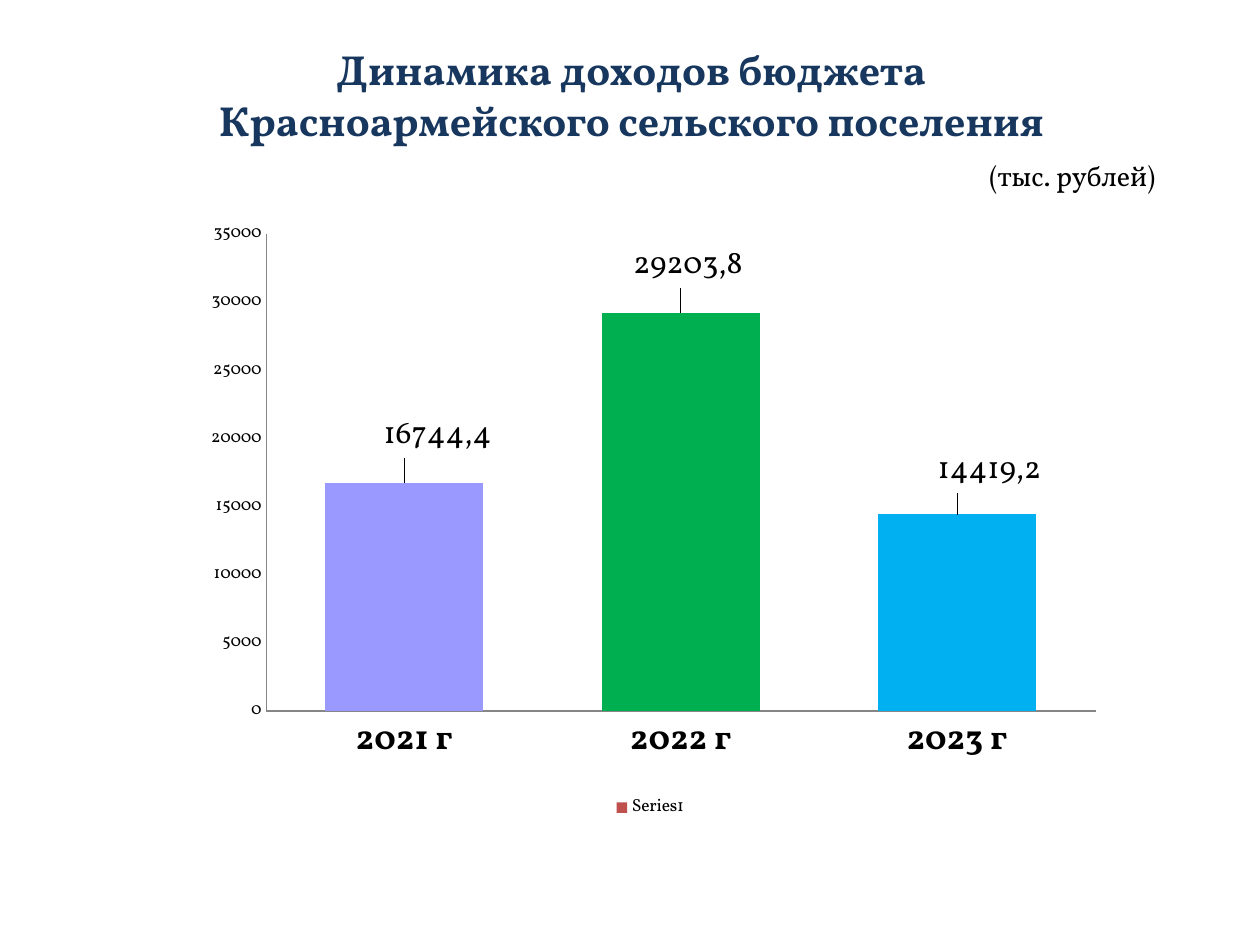
from dataclasses import dataclass

from pptx import Presentation
from pptx.chart.data import CategoryChartData
from pptx.dml.color import RGBColor
from pptx.enum.chart import (XL_CHART_TYPE, XL_LABEL_POSITION,
                             XL_LEGEND_POSITION, XL_TICK_MARK)
from pptx.enum.text import MSO_ANCHOR, MSO_AUTO_SIZE, PP_ALIGN
from pptx.oxml import parse_xml
from pptx.oxml.ns import nsdecls, qn
from pptx.util import Inches, Pt

COLUMN = XL_CHART_TYPE.COLUMN_CLUSTERED
OUTSIDE = XL_LABEL_POSITION.OUTSIDE_END
BOTTOM = XL_LEGEND_POSITION.BOTTOM
NO_TICK = XL_TICK_MARK.NONE
MIDDLE = MSO_ANCHOR.MIDDLE
NO_FIT = MSO_AUTO_SIZE.NONE
CENTER, RIGHT = PP_ALIGN.CENTER, PP_ALIGN.RIGHT

# Turns off the lines from moved labels to their columns
NO_LEADER = (f'<c:extLst {nsdecls("c")}>'
             '<c:ext uri="{CE6537A1-D6FC-4f65-9D91-7224C49458BB}" '
             'xmlns:c15="http://schemas.microsoft.com/office/drawing/2012/chart">'
             '<c15:showLeaderLines val="0"/></c:ext></c:extLst>')


@dataclass(frozen=True)
class Theme:
    face: str = "Vollkorn"
    navy: str = "17375E"
    black: str = "000000"
    axis: str = "868686"
    key: str = "C0504D"
    head: int = 24
    unit: int = 16
    label: int = 18
    year: int = 20
    small: int = 10


@dataclass(frozen=True)
class Bar:
    year: str
    value: float
    text: str
    color: str
    shift: tuple[float, float]  # label offset, as a share of the chart


THEME = Theme()
BARS = [
    Bar("2021 г", 16744.4, "16744,4", "9999FF", (0.037, -0.032)),
    Bar("2022 г", 29203.8, "29203,8", "00B050", (0.008, -0.032)),
    Bar("2023 г", 14419.2, "14419,2", "00B0F0", (0.036, -0.026)),
]


def set_font(font, size: int, color: str = THEME.black, bold: bool = False) -> None:
    form = {"name": THEME.face, "size": Pt(size), "bold": bold}
    for key, value in form.items():
        setattr(font, key, value)
    font.color.rgb = RGBColor.from_string(color)


def paint(fill, color: str) -> None:
    fill.solid()
    fill.fore_color.rgb = RGBColor.from_string(color)


def set_layout(node, spot: int, **parts: str | float) -> None:
    """Give a chart part a manual layout as its child number spot."""
    for old in node.findall(qn("c:layout")):
        node.remove(old)
    body = "".join(f'<c:{key} val="{val}"/>' for key, val in parts.items())
    node.insert(spot, parse_xml(f'<c:layout {nsdecls("c")}><c:manualLayout>{body}'
                                "</c:manualLayout></c:layout>"))


def add_title(slide) -> None:
    title = slide.shapes.title
    box = {"left": 0.51, "top": 0.43, "width": 9, "height": 1.01}
    for key, value in box.items():
        setattr(title, key, Inches(value))
    frame = title.text_frame
    frame.auto_size, frame.vertical_anchor = NO_FIT, MIDDLE
    frame.text = "Динамика доходов бюджета\vКрасноармейского сельского поселения"
    head = frame.paragraphs[0]
    head.alignment = CENTER
    for run in head.runs:
        set_font(run.font, THEME.head, THEME.navy, True)
    # Unit of measure, set in from the right edge
    unit = frame.add_paragraph()
    unit.alignment, unit.space_before = RIGHT, Pt(8)
    unit._p.get_or_add_pPr().set("marR", str(Inches(0.24)))
    run = unit.add_run()
    run.text = "(тыс. рублей)"
    set_font(run.font, THEME.unit)


def style_bar(point, bar: Bar) -> None:
    paint(point.format.fill, bar.color)
    label = point.data_label
    run = label.text_frame.paragraphs[0].add_run()
    run.text = bar.text
    set_font(run.font, THEME.label)
    label.position = OUTSIDE
    set_layout(label._dLbl, 1, x=bar.shift[0], y=bar.shift[1])


def add_chart(slide) -> None:
    data = CategoryChartData(number_format="0.0")
    data.categories = [bar.year for bar in BARS]
    data.add_series("Series1", [bar.value for bar in BARS])
    spot = [Inches(n) for n in (1.61, 1.7, 7.09, 4.88)]
    chart = slide.shapes.add_chart(COLUMN, *spot, data).chart
    chart.has_title = False
    set_font(chart.font, THEME.small)

    # Columns
    plot = chart.plots[0]
    plot.gap_width, plot.vary_by_categories = 75, False
    series = plot.series[0]
    paint(series.format.fill, THEME.key)
    for i, bar in enumerate(BARS):
        style_bar(series.points[i], bar)
    labels = series.data_labels
    labels.show_value = True
    labels._element.append(parse_xml(NO_LEADER))

    # Axes
    years, scale = chart.category_axis, chart.value_axis
    for axis, size in ((years, THEME.year), (scale, THEME.small)):
        axis.major_tick_mark = axis.minor_tick_mark = NO_TICK
        axis.has_major_gridlines = False
        paint(axis.format.line.fill, THEME.axis)
        set_font(axis.tick_labels.font, size, bold=axis is years)
    limits = {"minimum_scale": 0, "maximum_scale": 35000, "major_unit": 5000}
    for key, value in limits.items():
        setattr(scale, key, value)
    scale.tick_labels.number_format = "0"
    scale.tick_labels.number_format_is_linked = False

    # Legend and plot area
    chart.has_legend = True
    legend = chart.legend
    legend.position, legend.include_in_layout = BOTTOM, False
    set_font(legend.font, THEME.small)
    set_layout(legend._element, 1, xMode="edge", yMode="edge", x=0.457, y=0.938)
    set_layout(chart._chartSpace.chart.plotArea, 0, layoutTarget="inner",
               xMode="edge", yMode="edge", x=0.071, y=0.032, w=0.929, h=0.776)


def main() -> None:
    deck = Presentation()
    deck.slide_width, deck.slide_height = Inches(10), Inches(7.5)
    slide = deck.slides.add_slide(deck.slide_layouts[5])
    add_title(slide)
    add_chart(slide)
    deck.save("out.pptx")


if __name__ == "__main__":
    main()
